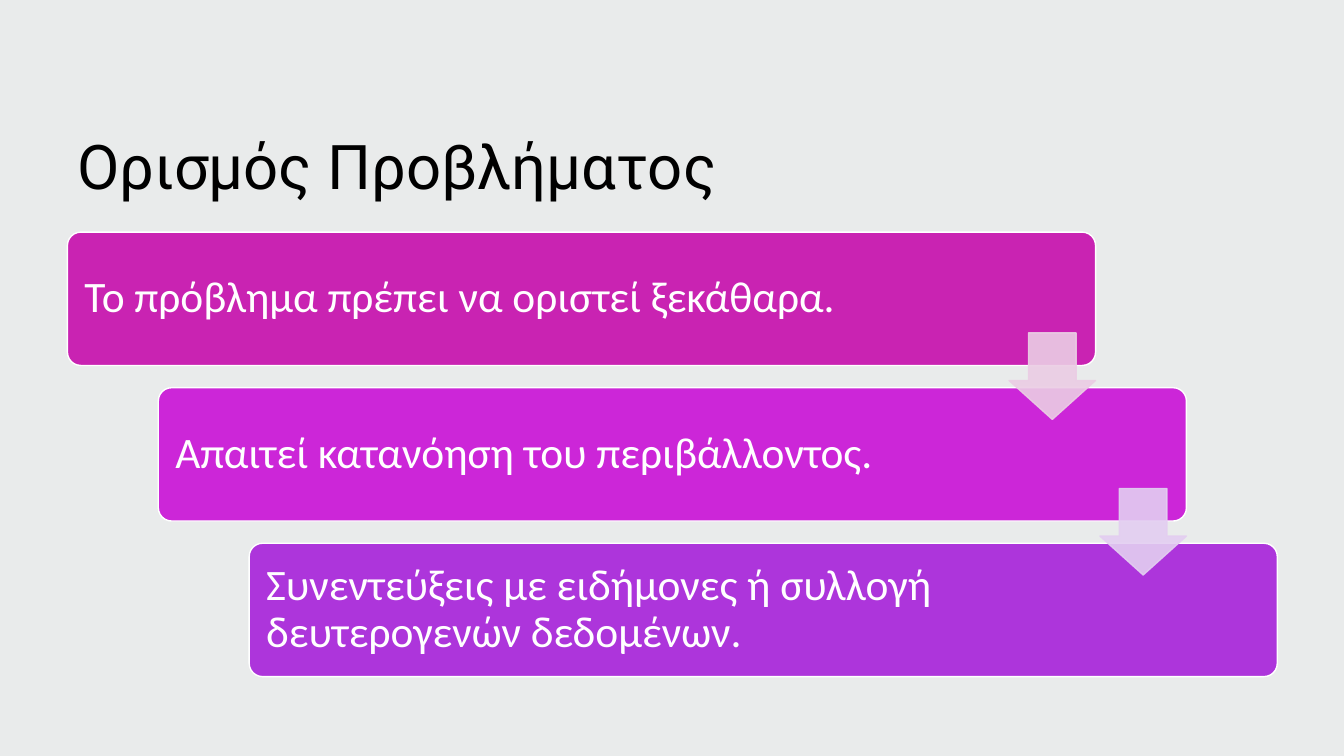
"""Builds the problem definition slide: a title and three descending steps."""
from lxml.etree import SubElement
from pptx import Presentation
from pptx.dml.color import RGBColor
from pptx.enum.shapes import MSO_SHAPE as Preset
from pptx.enum.text import MSO_ANCHOR as Anchor, PP_ALIGN as Align
from pptx.oxml.ns import qn
from pptx.util import Cm, Pt

TITLE = "Ορισμός Προβλήματος"
STEPS = [
    ("Το πρόβλημα πρέπει να οριστεί ξεκάθαρα.", "C923B2"),
    ("Απαιτεί κατανόηση του περιβάλλοντος.", "CC26D8"),
    ("Συνεντεύξεις με ειδήμονες ή συλλογή δευτερογενών δεδομένων.", "AD35DB"),
]
ARROW_COLORS = ["EBCDE4", "E3CEF1"]
BACKGROUND, VEIL, WHITE, BLACK = "F0F3F2", "AEAEAE", "FFFFFF", "000000"

SLIDE_W, SLIDE_H = 33.87, 19.05
LEFT, TOP = 1.7, 5.85
STEP_W, STEP_H = 25.91, 3.36
SHIFT_X, SHIFT_Y = 2.29, 3.92
ARROW_SIZE, ARROW_DROP = 2.18, 2.54

TITLE_FRAME = {"word_wrap": True, "vertical_anchor": Anchor.BOTTOM}
STEP_FRAME = {
    "word_wrap": True, "vertical_anchor": Anchor.MIDDLE,
    "margin_left": Cm(0.33), "margin_right": Cm(4.8),
    "margin_top": Cm(0.33), "margin_bottom": Cm(0.33),
}
TITLE_FONT = {"name": "Roboto", "size": Pt(44)}
STEP_FONT = {"name": "Calibri", "size": Pt(31)}
PARAGRAPH = {"alignment": Align.LEFT, "line_spacing": 0.9}


def apply(target, values):
    for name, value in values.items():
        setattr(target, name, value)


def paint(fill, color, opacity=100):
    fill.solid()
    fill.fore_color.rgb = RGBColor.from_string(color)
    if opacity < 100:
        for tint in fill._xPr.iter(qn("a:srgbClr")):
            SubElement(tint, qn("a:alpha"), val=str(opacity * 1000))


def write(shape, text, frame_format, font_format, color):
    frame = shape.text_frame
    apply(frame, frame_format)
    paragraph = frame.paragraphs[0]
    paragraph.text = text
    apply(paragraph, PARAGRAPH)
    apply(paragraph.font, font_format)
    paint(paragraph.font.fill, color)


def add_preset(slide, preset, box, color, line=None, opacity=100, adjust=()):
    shape = slide.shapes.add_shape(preset, *map(Cm, box))
    shape.shadow.inherit = False
    for index, value in enumerate(adjust):
        shape.adjustments[index] = value
    paint(shape.fill, color, opacity)
    if line:
        shape.line.width = Pt(1)
        paint(shape.line.fill, line, opacity)
    else:
        shape.line.fill.background()
    return shape


def main():
    deck = Presentation()
    deck.slide_width, deck.slide_height = Cm(SLIDE_W), Cm(SLIDE_H)
    slide = deck.slides.add_slide(deck.slide_layouts[6])
    paint(slide.background.fill, BACKGROUND)
    add_preset(slide, Preset.RECTANGLE, (0, 0, SLIDE_W, SLIDE_H), VEIL, opacity=10)

    title = slide.shapes.add_textbox(Cm(LEFT), Cm(1.55), Cm(30.48), Cm(3.68))
    write(title, TITLE, TITLE_FRAME, TITLE_FONT, BLACK)

    corners = [(LEFT + i * SHIFT_X, TOP + i * SHIFT_Y) for i in range(len(STEPS))]
    for (left, top), (text, color) in zip(corners, STEPS):
        step = add_preset(slide, Preset.ROUNDED_RECTANGLE, (left, top, STEP_W, STEP_H),
                          color, line=WHITE, adjust=[0.1])
        write(step, text, STEP_FRAME, STEP_FONT, WHITE)

    for (left, top), color in zip(corners, ARROW_COLORS):
        box = (left + STEP_W - ARROW_SIZE, top + ARROW_DROP, ARROW_SIZE, ARROW_SIZE)
        add_preset(slide, Preset.DOWN_ARROW, box, color, line=color, opacity=90,
                   adjust=[0.55, 0.45])

    deck.save("out.pptx")


if __name__ == "__main__":
    main()
